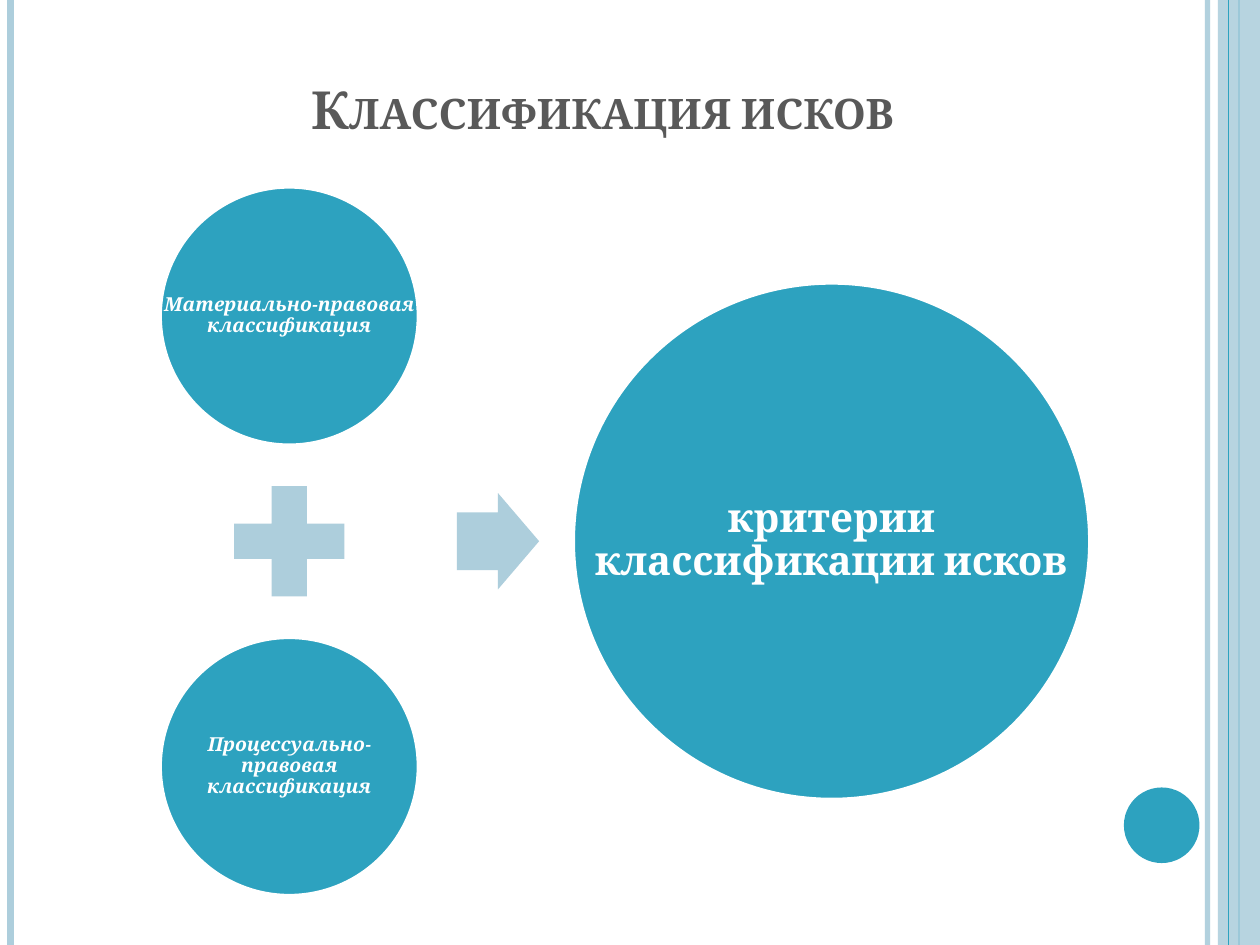
from dataclasses import dataclass

from lxml.etree import SubElement
from pptx import Presentation
from pptx.dml.color import RGBColor
from pptx.enum.shapes import MSO_CONNECTOR, MSO_SHAPE
from pptx.enum.text import MSO_ANCHOR, MSO_AUTO_SIZE, PP_ALIGN
from pptx.oxml.ns import qn
from pptx.util import Pt


@dataclass(frozen=True)
class Theme:
    font: str = "Cambria"
    accent: str = "2DA2BF"
    pale: str = "ADCEDC"
    white: str = "FFFFFF"
    title: str = "595959"
    title_size: float = 30
    result_size: float = 23
    part_size: float = 11


THEME = Theme()


def set_alpha(fill, percent):
    color = fill._xPr.find(f".//{qn('a:srgbClr')}")
    SubElement(color, qn("a:alpha"), val=str(percent * 1000))


def write_text(sp, text, size, color, italic=False, small_caps=False,
               anchor=MSO_ANCHOR.MIDDLE, spacing=None, inset=None):
    tf = sp.text_frame
    tf.word_wrap = True
    tf.auto_size = MSO_AUTO_SIZE.NONE
    tf.vertical_anchor = anchor
    if inset is not None:
        tf.margin_left = tf.margin_right = Pt(inset)
        tf.margin_top = tf.margin_bottom = Pt(inset)
    p = tf.paragraphs[0]
    p.alignment = PP_ALIGN.CENTER
    p.line_spacing = spacing
    r = p.add_run()
    r.text = text
    r.font.name = THEME.font
    r.font.size = Pt(size)
    r.font.bold = True
    r.font.italic = italic
    r.font.color.rgb = RGBColor.from_string(color)
    if small_caps:
        r.font._element.set("cap", "small")


def add_figure(s, kind, left, top, width, height, color, outline=None):
    sp = s.shapes.add_shape(kind, Pt(left), Pt(top), Pt(width), Pt(height))
    sp.shadow.inherit = False
    sp.fill.solid()
    sp.fill.fore_color.rgb = RGBColor.from_string(color)
    if outline:
        sp.line.color.rgb = RGBColor.from_string(outline)
        sp.line.width = Pt(2)
    else:
        sp.line.fill.background()
    return sp


def add_rule(s, x, top, height, color, width, alpha=None):
    line = s.shapes.add_connector(
        MSO_CONNECTOR.STRAIGHT, Pt(x), Pt(top), Pt(x), Pt(top + height))
    SubElement(line._element.spPr, qn("a:effectLst"))
    line.line.color.rgb = RGBColor.from_string(color)
    line.line.width = Pt(width)
    if alpha:
        set_alpha(line.line.fill, alpha)


def add_circle(s, left, top, size, text, text_size, italic=False, inset=1.5):
    add_figure(s, MSO_SHAPE.OVAL, left, top, size, size,
               THEME.accent, outline=THEME.white)
    label = s.shapes.add_textbox(Pt(left), Pt(top), Pt(size), Pt(size))
    write_text(label, text, text_size, THEME.white, italic=italic,
               spacing=0.9, inset=inset)


def add_frame(s, left, top, width, height):
    right = left + width
    add_rule(s, right - 30, top, height, THEME.pale, 3, alpha=93)
    add_rule(s, left + 6, top, height, THEME.pale, 4.5)
    add_rule(s, right - 12, top, height, THEME.accent, 1.5)
    band = add_figure(s, MSO_SHAPE.RECTANGLE, right - 24, top, 24, height,
                      THEME.pale)
    set_alpha(band.fill, 87)
    add_rule(s, right - 18, top, height, THEME.accent, 0.75)
    add_figure(s, MSO_SHAPE.OVAL, right - 77.75, top + height - 90, 43.2, 43.2,
               THEME.accent)


def add_title(s, left, top, width, height):
    sp = s.shapes.title
    sp.left, sp.top, sp.width, sp.height = map(Pt, (left, top, width, height))
    write_text(sp, "Классификация исков", THEME.title_size, THEME.title,
               small_caps=True, anchor=MSO_ANCHOR.BOTTOM)


def add_equation(s, left, top, width, height):
    part, plus, result = 147.6, 85.7, 295.2
    arrow_w, arrow_h = 47, 55
    middle = top + height / 2
    parts = ("Материально-правовая классификация",
             "Процессуально-правовая классификация")
    for y, text in zip((top, top + height - part), parts):
        add_circle(s, left, y, part, text, THEME.part_size, italic=True)
    add_figure(s, MSO_SHAPE.MATH_PLUS, left + (part - plus) / 2,
               middle - plus / 2, plus, plus, THEME.pale)
    arrow = add_figure(s, MSO_SHAPE.RIGHT_ARROW, left + part + 22,
                       middle - arrow_h / 2, arrow_w, arrow_h, THEME.pale)
    arrow.adjustments[0] = 0.6
    arrow.adjustments[1] = 0.5
    add_circle(s, left + width - result, middle - result / 2, result,
               "критерии классификации исков", THEME.result_size, inset=2)


def main():
    prs = Presentation()
    prs.slide_width, prs.slide_height = Pt(720), Pt(540)
    s = prs.slides.add_slide(prs.slide_layouts[5])
    s.background.fill.solid()
    s.background.fill.fore_color.rgb = RGBColor.from_string(THEME.white)
    add_frame(s, 0, 0, 720, 540)
    add_title(s, 50.4, 16.5, 588, 67)
    add_equation(s, 91.5, 106.8, 531.3, 405)
    prs.save("out.pptx")


if __name__ == "__main__":
    main()
